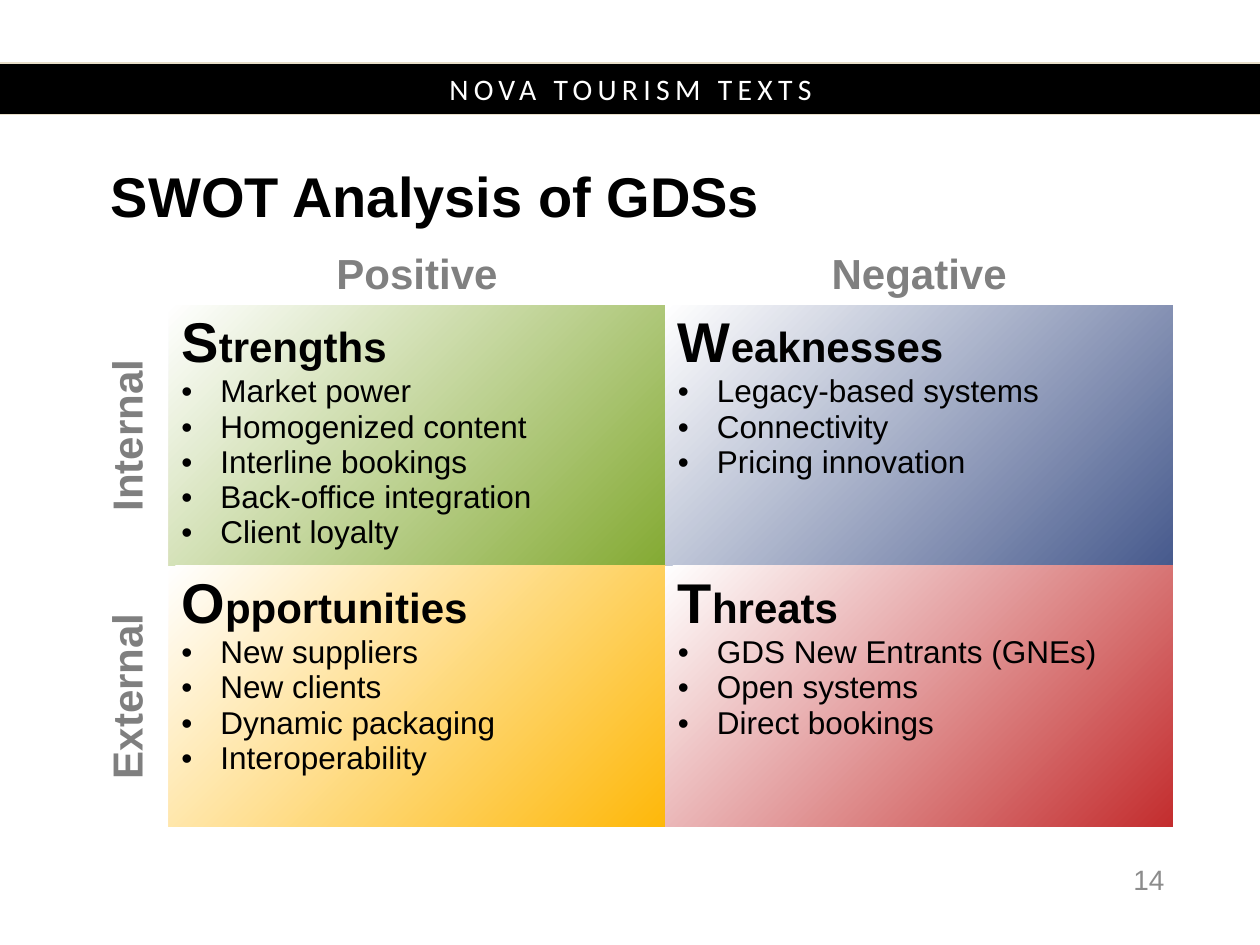
from dataclasses import dataclass

from lxml import etree
from pptx import Presentation
from pptx.dml.color import RGBColor
from pptx.enum.shapes import MSO_SHAPE
from pptx.enum.text import MSO_ANCHOR, MSO_AUTO_SIZE, PP_ALIGN
from pptx.oxml.ns import qn
from pptx.util import Inches, Pt

RECT = MSO_SHAPE.RECTANGLE
MIDDLE = MSO_ANCHOR.MIDDLE
FIXED = MSO_AUTO_SIZE.NONE
LEFT, CENTER, RIGHT = PP_ALIGN.LEFT, PP_ALIGN.CENTER, PP_ALIGN.RIGHT


@dataclass(frozen=True)
class Theme:
    font: str = "Arial"
    band_font: str = "Calibri"
    black: str = "000000"
    white: str = "FFFFFF"
    edge: str = "E7DEC9"
    head: str = "808080"
    side: str = "7F7F7F"
    page: str = "8C8C8C"
    green: str = "84AA33"
    blue: str = "475A8D"
    gold: str = "FEB80A"
    red: str = "C32D2E"
    big: int = 32
    mid: int = 24
    body: int = 18
    band: int = 17
    small: int = 16


theme = Theme()
NO_STYLE = "{2D5ABB26-0587-4C30-8999-92F81FD0307C}"


def style(par, size, color, bold=False, align=LEFT, face=theme.font):
    par.alignment = align
    font = par.font
    font.name, font.size, font.bold = face, Pt(size), bold
    font.color.rgb = RGBColor.from_string(color)


def shade(cell, color):
    fill = cell.fill
    fill.gradient()
    for stop, tone in zip(fill.gradient_stops, (color, theme.white)):
        stop.color.rgb = RGBColor.from_string(tone)
    grad = cell._tc.tcPr.find(qn("a:gradFill"))
    grad.remove(grad.find(qn("a:lin")))
    route = etree.SubElement(grad, qn("a:path"), path="circle")
    etree.SubElement(route, qn("a:fillToRect"), l="100000", t="100000")
    etree.SubElement(grad, qn("a:tileRect"), r="-100000", b="-100000")


prs = Presentation()
prs.slide_width, prs.slide_height = Inches(10), Inches(7.5)
slide = prs.slides.add_slide(prs.slide_layouts[5])
shapes = slide.shapes

band = shapes.add_shape(RECT, Inches(-0.08), Inches(0.5), Inches(10.17), Inches(0.41))
band.shadow.inherit = False
band.fill.solid()
band.fill.fore_color.rgb = RGBColor.from_string(theme.black)
band.line.color.rgb = RGBColor.from_string(theme.edge)
band.line.width = Pt(0.75)
band.text_frame.vertical_anchor = MIDDLE
par = band.text_frame.paragraphs[0]
run = par.add_run()
run.text = "NOVA TOURISM TEXTS"
run._r.get_or_add_rPr().set("spc", "300")
style(par, theme.band, theme.white, align=CENTER, face=theme.band_font)

title = shapes.title
title.left, title.top = Inches(0.78), Inches(1.35)
title.width, title.height = Inches(8.53), Inches(0.48)
title.text = "SWOT Analysis of GDSs"
title.text_frame.auto_size = FIXED
title.text_frame.vertical_anchor = MIDDLE
par = title.text_frame.paragraphs[0]
par.line_spacing = Pt(theme.big)
style(par, theme.big, theme.black, bold=True)

frame = shapes.add_table(3, 3, Inches(0.78), Inches(1.95), Inches(8.53), Inches(4.49))
table = frame.table
table.first_row = table.horz_banding = False
table._tbl.tblPr.find(qn("a:tableStyleId")).text = NO_STYLE
for col, width in zip(table.columns, (0.56, 3.94, 4.03)):
    col.width = Inches(width)
for row, height in zip(table.rows, (0.35, 2.07, 2.07)):
    row.height = Inches(height)
table.cell(0, 0).fill.background()

labels = (
    (0, 1, "Positive", theme.head),
    (0, 2, "Negative", theme.head),
    (1, 0, "Internal", theme.side),
    (2, 0, "External", theme.side),
)
for row, col, text, color in labels:
    cell = table.cell(row, col)
    cell.fill.background()
    cell.text = text
    style(cell.text_frame.paragraphs[0], theme.mid, color, bold=True, align=CENTER)
    if col == 0:
        cell._tc.get_or_add_tcPr().set("vert", "vert270")

parts = (
    (1, 1, theme.green, "Strengths",
     ("Market power", "Homogenized content", "Interline bookings",
      "Back-office integration", "Client loyalty")),
    (1, 2, theme.blue, "Weaknesses",
     ("Legacy-based systems", "Connectivity", "Pricing innovation")),
    (2, 1, theme.gold, "Opportunities",
     ("New suppliers", "New clients", "Dynamic packaging", "Interoperability")),
    (2, 2, theme.red, "Threats",
     ("GDS New Entrants (GNEs)", "Open systems", "Direct bookings")),
)
for row, col, color, name, items in parts:
    cell = table.cell(row, col)
    shade(cell, color)
    par = cell.text_frame.paragraphs[0]
    style(par, theme.mid, theme.black, bold=True)
    for text, size in ((name[0], theme.big), (name[1:], theme.mid)):
        run = par.add_run()
        run.text = text
        run.font.size = Pt(size)
    for item in items:
        par = cell.text_frame.add_paragraph()
        par.text = item
        props = par._p.get_or_add_pPr()
        props.set("marL", str(Inches(0.31)))
        props.set("indent", str(Inches(-0.31)))
        etree.SubElement(props, qn("a:buFont"), typeface=theme.font)
        etree.SubElement(props, qn("a:buChar"), char="•")
        style(par, theme.body, theme.black)

page = shapes.add_textbox(Inches(7.01), Inches(6.78), Inches(2.33), Inches(0.4))
page.text_frame.word_wrap = True
page.text_frame.vertical_anchor = MIDDLE
par = page.text_frame.paragraphs[0]
par.text = "14"
style(par, theme.small, theme.page, align=RIGHT)

prs.save("out.pptx")
